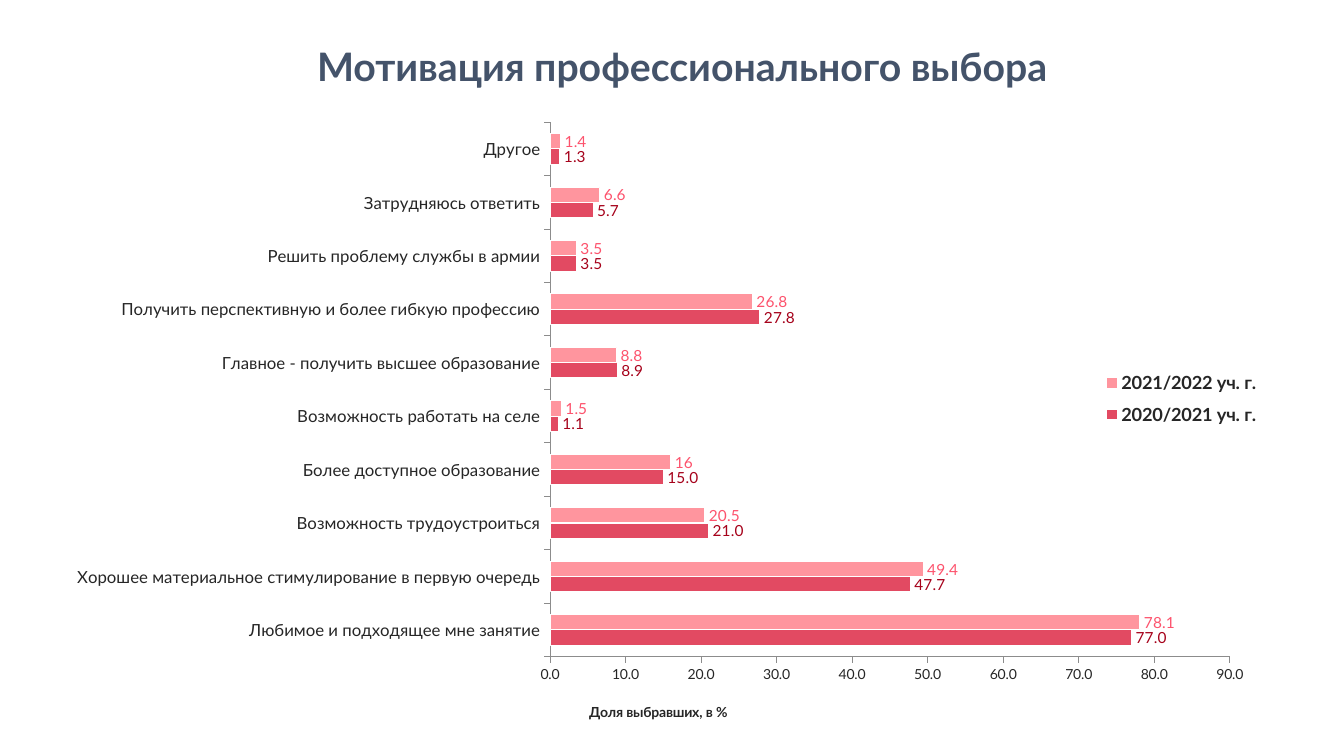
"""Builds a slide with a bar chart of motives for choosing a profession."""
import dataclasses

import lxml.etree
import pptx
import pptx.chart.data
import pptx.dml.color
import pptx.enum.chart
import pptx.enum.text
import pptx.oxml.ns
import pptx.util

Inches = pptx.util.Inches
qn = pptx.oxml.ns.qn


@dataclasses.dataclass(frozen=True)
class Theme:
    """Colours and type sizes of the slide."""
    font: str = "Lato"
    title: str = "44536A"
    text: str = "262626"
    axis: str = "8C8C8C"
    white: str = "FFFFFF"
    title_size: int = 28
    legend_size: int = 13
    category_size: int = 12
    label_size: int = 11
    scale_size: int = 10


@dataclasses.dataclass(frozen=True)
class Series:
    """One school year with its shares and colours."""
    name: str
    values: tuple
    fill: str
    label: str
    number_format: str


MOTIVES = (
    "Любимое и подходящее мне занятие",
    "Хорошее материальное стимулирование в первую очередь",
    "Возможность трудоустроиться",
    "Более доступное образование",
    "Возможность работать на селе",
    "Главное - получить высшее образование",
    "Получить перспективную и более гибкую профессию",
    "Решить проблему службы в армии",
    "Затрудняюсь ответить",
    "Другое",
)
YEARS = (
    Series("2020/2021 уч. г.", (77, 47.7, 21, 15, 1.1, 8.9, 27.8, 3.5, 5.7, 1.3),
           "E24A62", "A6021B", "0.0"),
    Series("2021/2022 уч. г.", (78.1, 49.4, 20.5, 16, 1.5, 8.8, 26.8, 3.5, 6.6, 1.4),
           "FF959E", "FD536D", "General"),
)


class SlideBuilder:
    """Draws the elements of a slide in one theme."""

    def __init__(self, slide, theme):
        self.slide = slide
        self.theme = theme

    def style(self, font, size, color, bold=False):
        font.name = self.theme.font
        font.size = pptx.util.Pt(size)
        font.bold = bold
        font.color.rgb = pptx.dml.color.RGBColor.from_string(color)

    def title(self, text, left, top, width, height):
        box = self.slide.shapes.title
        box.left, box.top = Inches(left), Inches(top)
        box.width, box.height = Inches(width), Inches(height)
        frame = box.text_frame
        frame.text = text
        frame.word_wrap = True
        frame.auto_size = pptx.enum.text.MSO_AUTO_SIZE.SHAPE_TO_FIT_TEXT
        frame.vertical_anchor = pptx.enum.text.MSO_ANCHOR.TOP
        para = frame.paragraphs[0]
        para.alignment = pptx.enum.text.PP_ALIGN.CENTER
        para.line_spacing = 1.5
        self.style(para.font, self.theme.title_size, self.theme.title, True)

    def bar_chart(self, categories, series_list, left, top, width, height):
        data = pptx.chart.data.CategoryChartData()
        data.categories = categories
        for series in series_list:
            data.add_series(series.name, series.values)
        chart = self.slide.shapes.add_chart(
            pptx.enum.chart.XL_CHART_TYPE.BAR_CLUSTERED,
            Inches(left), Inches(top), Inches(width), Inches(height), data).chart
        self.style(chart.font, self.theme.category_size, self.theme.text)
        chart.has_title = False
        plot = chart.plots[0]
        plot.gap_width = 150
        plot.overlap = 0
        plot.vary_by_categories = False
        for bars, series in zip(plot.series, series_list):
            self.bars(bars, series)
        return chart

    def bars(self, bars, series):
        bars.format.fill.solid()
        bars.format.fill.fore_color.rgb = pptx.dml.color.RGBColor.from_string(series.fill)
        self.line(bars.format.line, self.theme.white)
        labels = bars.data_labels
        labels.show_value = True
        labels.position = pptx.enum.chart.XL_LABEL_POSITION.OUTSIDE_END
        labels.number_format = series.number_format
        labels.number_format_is_linked = False
        self.style(labels.font, self.theme.label_size, series.label)

    def line(self, line, color):
        line.color.rgb = pptx.dml.color.RGBColor.from_string(color)
        line.width = pptx.util.Pt(0.75)

    def axis(self, axis, size):
        axis.has_major_gridlines = False
        axis.major_tick_mark = pptx.enum.chart.XL_TICK_MARK.OUTSIDE
        axis.minor_tick_mark = pptx.enum.chart.XL_TICK_MARK.NONE
        self.line(axis.format.line, self.theme.axis)
        self.style(axis.tick_labels.font, size, self.theme.text)

    def value_scale(self, axis, caption, maximum, step):
        axis.minimum_scale, axis.maximum_scale = 0, maximum
        axis.major_unit = step
        axis.tick_labels.number_format = "0.0"
        axis.tick_labels.number_format_is_linked = False
        axis.has_title = True
        axis.axis_title.text_frame.text = caption
        para = axis.axis_title.text_frame.paragraphs[0]
        self.style(para.font, self.theme.scale_size, self.theme.text, True)

    def legend(self, chart):
        chart.has_legend = True
        chart.legend.position = pptx.enum.chart.XL_LEGEND_POSITION.RIGHT
        chart.legend.include_in_layout = False
        self.style(chart.legend.font, self.theme.legend_size, self.theme.text, True)

    def place(self, chart, element_name, index, inner=False, **fractions):
        parent = chart.element.find(f".//{element_name}", chart.element.nsmap)
        for old in parent.findall(qn("c:layout")):
            parent.remove(old)
        layout = lxml.etree.Element(qn("c:layout"))
        manual = lxml.etree.SubElement(layout, qn("c:manualLayout"))
        settings = {"layoutTarget": "inner"} if inner else {}
        settings.update(xMode="edge", yMode="edge", **fractions)
        for name, value in settings.items():
            lxml.etree.SubElement(manual, qn(f"c:{name}")).set("val", str(value))
        parent.insert(index, layout)


def main():
    theme = Theme()
    deck = pptx.Presentation()
    deck.slide_width, deck.slide_height = Inches(13.33), Inches(7.5)
    builder = SlideBuilder(deck.slides.add_slide(deck.slide_layouts[5]), theme)
    builder.title("Мотивация профессионального выбора", 0.48, 0.14, 12.57, 0.72)
    chart = builder.bar_chart(MOTIVES, YEARS, 0.64, 1.03, 12.04, 6.16)
    builder.axis(chart.category_axis, theme.category_size)
    builder.axis(chart.value_axis, theme.scale_size)
    builder.value_scale(chart.value_axis, "Доля выбравших, в %", 90, 10)
    builder.legend(chart)
    builder.place(chart, "c:plotArea", 0, inner=True, x=0.4, y=0.03, w=0.56, h=0.87)
    builder.place(chart, "c:legend", 1, x=0.85, y=0.42, w=0.14, h=0.12)
    builder.place(chart, "c:valAx/c:title", 1, x=0.43, y=0.97)
    deck.save("out.pptx")


if __name__ == "__main__":
    main()
